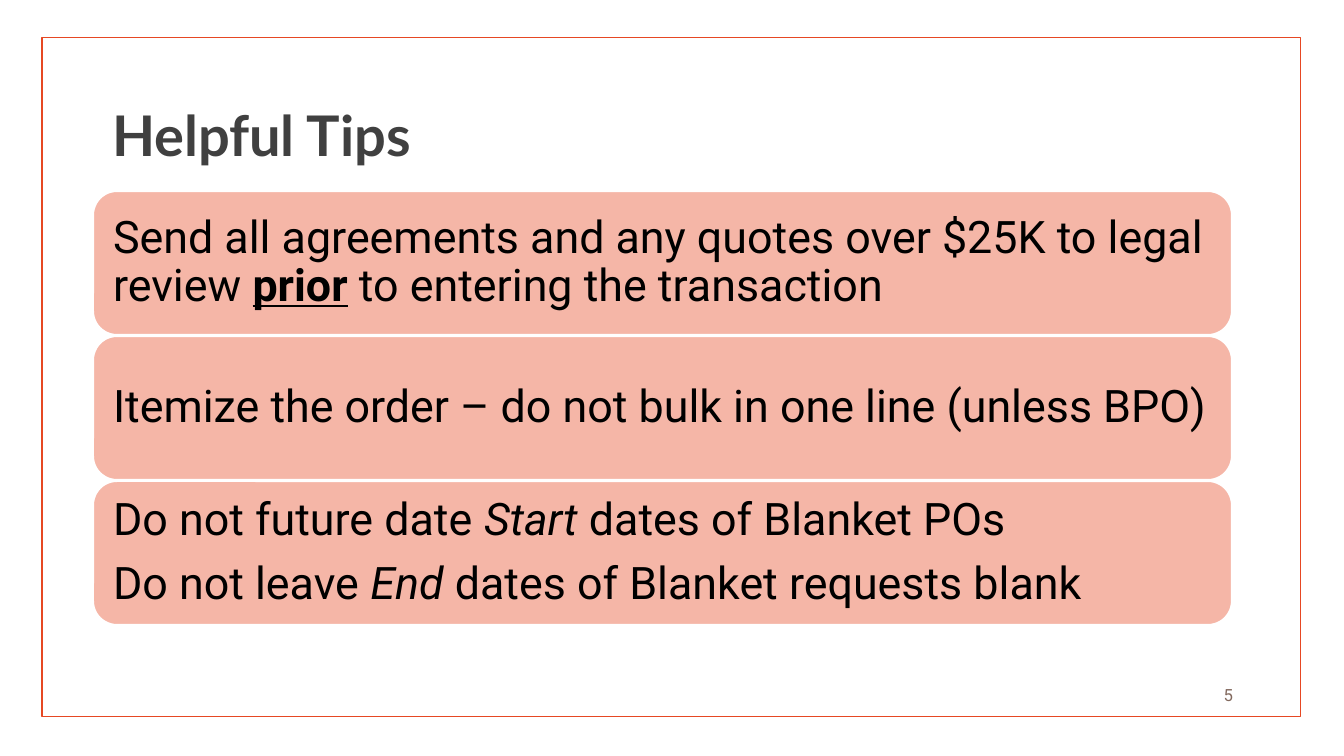
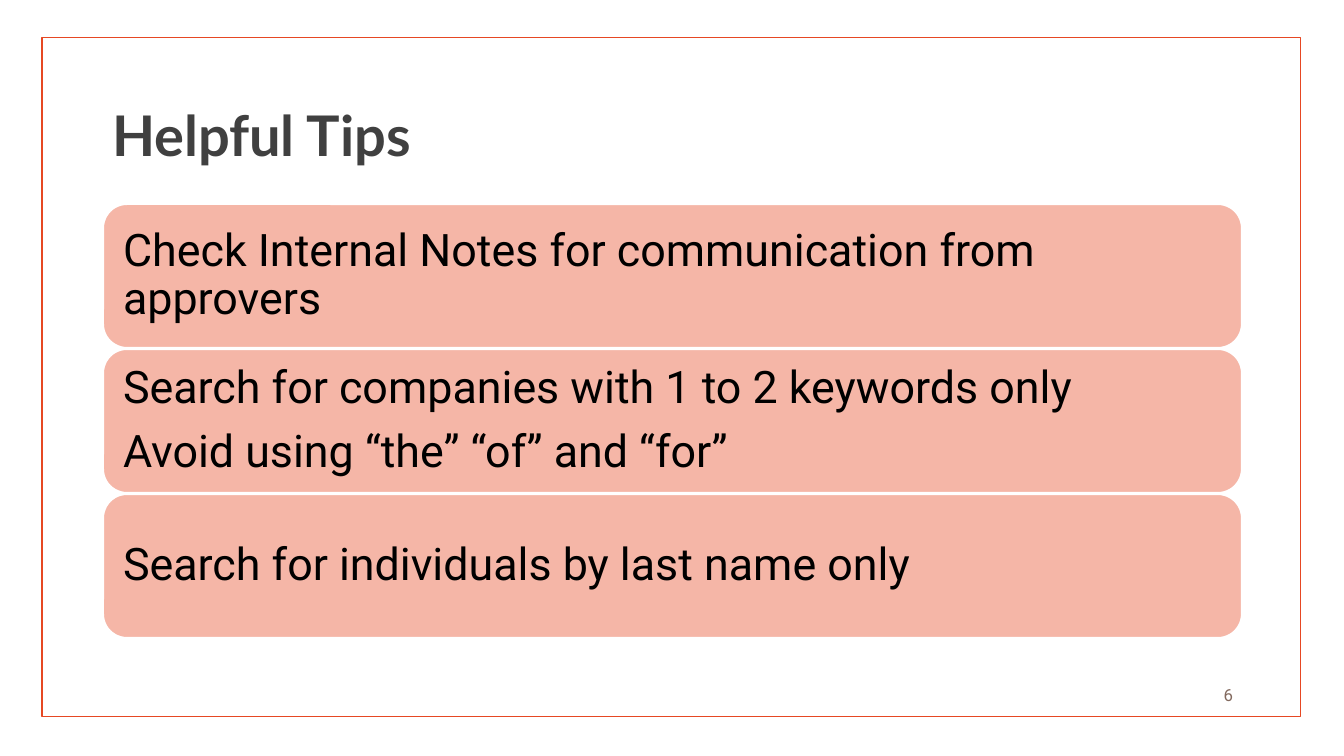
from pptx import Presentation
from pptx.dml.color import RGBColor
from pptx.enum.shapes import MSO_SHAPE as Preset
from pptx.enum.text import MSO_ANCHOR as Anchor, MSO_AUTO_SIZE as AutoSize, PP_ALIGN as Align
from pptx.util import Emu, Pt

ORANGE = RGBColor(0xE6, 0x48, 0x23)
SALMON = RGBColor(0xF5, 0xB6, 0xA7)
WHITE = RGBColor(0xFF, 0xFF, 0xFF)
BLACK = RGBColor(0x00, 0x00, 0x00)
CHARCOAL = RGBColor(0x40, 0x40, 0x40)
BROWN = RGBColor(0x82, 0x69, 0x5E)

HEADING_FONT = "Lato"
BODY_FONT = "Roboto"

PAGE_SIZE = (1344, 756)
FRAME_BOX = (42, 38, 1259, 679)
TITLE_BOX = (102, 54, 1139, 168)
NUMBER_BOX = (941, 675, 302, 40)
TIP_WIDTH, TIP_HEIGHT, TIP_PITCH, TIP_INSET = 1139, 144, 145, 13

PAGES = [
    {
        "number": 5,
        "origin": (93, 191),
        "tips": [
            [[("Send all agreements and any quotes over $25K to legal review ", ""),
              ("prior", "strong"),
              (" to entering the transaction", "")]],
            [[("Itemize the order – do not bulk in one line (unless BPO)", "")]],
            [[("Do not future date ", ""), ("Start", "italic"),
              (" dates of Blanket POs", "")],
             [("Do not leave ", ""), ("End", "italic"),
              (" dates of Blanket requests blank", "")]],
        ],
    },
    {
        "number": 6,
        "origin": (103, 204),
        "tips": [
            [[("Check Internal Notes for communication from approvers", "")]],
            [[("Search for companies with 1 to 2 keywords only", "")],
             [("Avoid using “the” “of” and “for”", "")]],
            [[("Search for individuals by last name only", "")]],
        ],
    },
]


def px(length):
    return Emu(round(length * 914400 / 100.8))


def place(box):
    return [px(length) for length in box]


def set_font(para, name, size, color, bold=False):
    font = para.font
    font.name, font.size, font.bold = name, Pt(size), bold
    font.color.rgb = color


def add_outlined(page, preset, box, line_color, line_width):
    shape = page.shapes.add_shape(preset, *place(box))
    shape.shadow.inherit = False
    shape.line.color.rgb = line_color
    shape.line.width = Pt(line_width)
    return shape


def add_frame(page, box):
    add_outlined(page, Preset.RECTANGLE, box, ORANGE, 0.75).fill.background()


def fill_title(page, box, text):
    title = page.shapes.title
    title.left, title.top, title.width, title.height = place(box)
    frame = title.text_frame
    frame.text = text
    frame.vertical_anchor = Anchor.MIDDLE
    frame.auto_size = AutoSize.NONE
    para = frame.paragraphs[0]
    para.alignment = Align.LEFT
    para.line_spacing = 0.9
    set_font(para, HEADING_FONT, 40, CHARCOAL, bold=True)


def add_number(page, box, number):
    frame = page.shapes.add_textbox(*place(box)).text_frame
    frame.word_wrap = True
    frame.vertical_anchor = Anchor.MIDDLE
    para = frame.paragraphs[0]
    para.text = str(number)
    para.alignment = Align.RIGHT
    set_font(para, BODY_FONT, 12, BROWN)


def write_spans(para, spans):
    para.alignment = Align.LEFT
    para.line_spacing = 0.9
    para.space_after = Pt(11)
    set_font(para, BODY_FONT, 32, BLACK)
    for text, style in spans:
        span = para.add_run()
        span.text = text
        if style == "strong":
            span.font.bold = span.font.underline = True
        elif style == "italic":
            span.font.italic = True


def add_tip(page, box, lines):
    tip = add_outlined(page, Preset.ROUNDED_RECTANGLE, box, WHITE, 1.5)
    tip.fill.solid()
    tip.fill.fore_color.rgb = SALMON
    frame = tip.text_frame
    frame.word_wrap = True
    frame.vertical_anchor = Anchor.MIDDLE
    frame.margin_left = frame.margin_right = px(TIP_INSET)
    frame.margin_top = frame.margin_bottom = px(TIP_INSET)
    for index, spans in enumerate(lines):
        para = frame.add_paragraph() if index else frame.paragraphs[0]
        write_spans(para, spans)


def add_tips(page, origin, tips):
    left, top = origin
    for index, lines in enumerate(tips):
        add_tip(page, (left, top + index * TIP_PITCH, TIP_WIDTH, TIP_HEIGHT), lines)


def add_tips_page(deck, number, origin, tips):
    page = deck.slides.add_slide(deck.slide_layouts.get_by_name("Title Only"))
    add_frame(page, FRAME_BOX)
    fill_title(page, TITLE_BOX, "Helpful Tips")
    add_tips(page, origin, tips)
    add_number(page, NUMBER_BOX, number)


def main():
    deck = Presentation()
    deck.slide_width, deck.slide_height = place(PAGE_SIZE)
    for content in PAGES:
        add_tips_page(deck, **content)
    deck.save("out.pptx")


if __name__ == "__main__":
    main()
